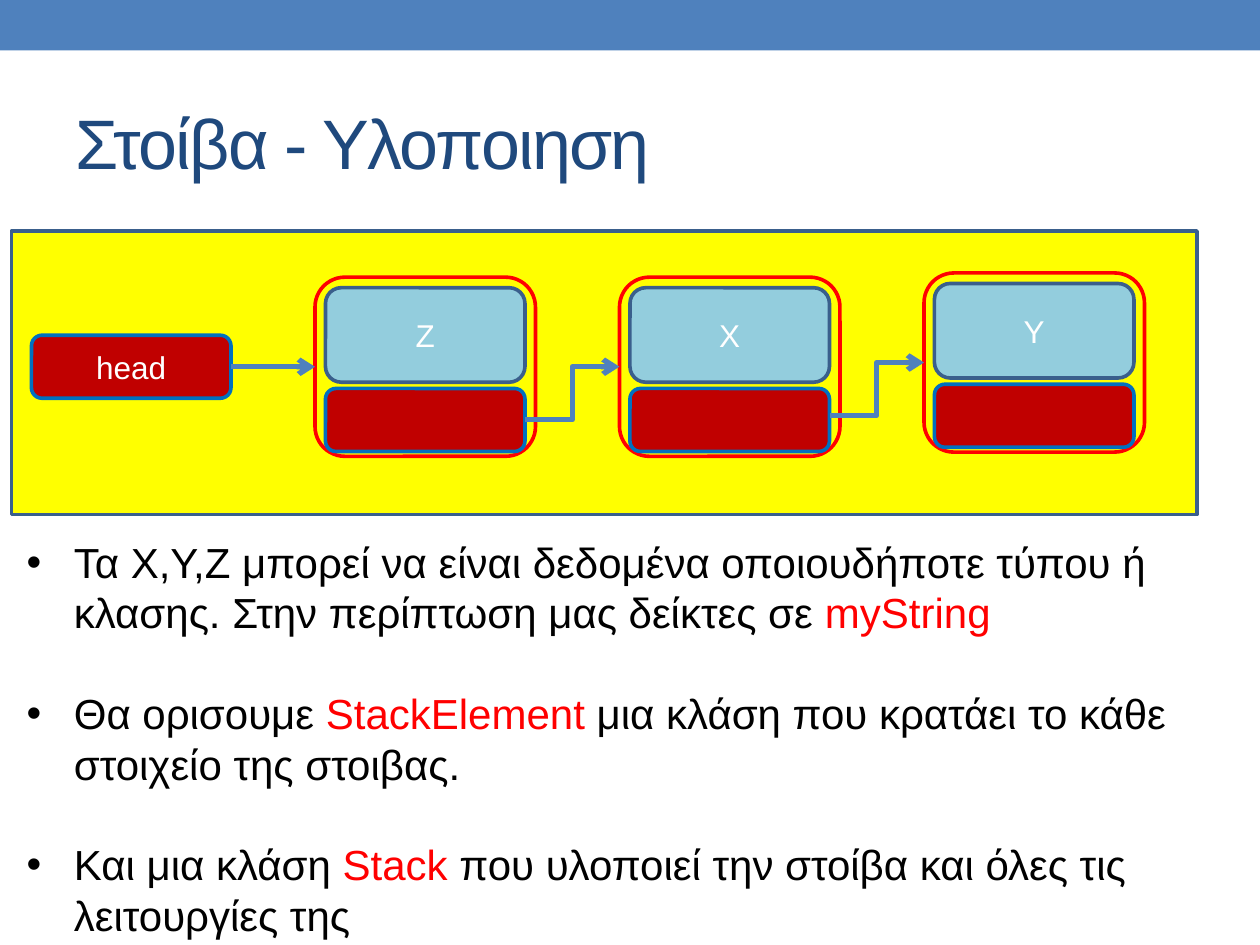
from lxml import etree
from pptx import Presentation
from pptx.dml.color import RGBColor
from pptx.enum import shapes as kinds, text as tx
from pptx.oxml import ns
from pptx.util import Pt

BLUE = RGBColor(0x4F, 0x81, 0xBD)
NAVY = RGBColor(0x1F, 0x49, 0x7D)
EDGE = RGBColor(0x3A, 0x5F, 0x8C)
RIM = RGBColor(0x00, 0x70, 0xC0)
SKY = RGBColor(0x93, 0xCD, 0xDD)
WINE = RGBColor(0xC0, 0x00, 0x00)
RED = RGBColor(0xFF, 0x00, 0x00)
YELLOW = RGBColor(0xFF, 0xFF, 0x00)
WHITE = RGBColor(0xFF, 0xFF, 0xFF)
BLACK = RGBColor(0x00, 0x00, 0x00)

TITLE = "Στοίβα - Υλοποιηση"
# Each point: text before, class name in red, text after
POINTS = [
    ("Τα Χ,Υ,Ζ μπορεί να είναι δεδομένα οποιουδήποτε τύπου ή κλασης. "
     "Στην περίπτωση μας δείκτες σε ", "myString", ""),
    ("Θα ορισουμε ", "StackElement ",
     "μια κλάση που κρατάει το κάθε στοιχείο της στοιβας."),
    ("Και μια κλάση ", "Stack ",
     "που υλοποιεί την στοίβα και όλες τις λειτουργίες της"),
]
# Each node: label, top
NODES = [("Z", 158.4), ("X", 158.4), ("Y", 156)]

LEFT, STEP = 180, 174
NODE_W, NODE_H = 126, 102.4
PAD, CELL_W, DATA_H, LINK_H = 6, 114, 54, 36
LINK_Y = 63.6
HEAD_X, HEAD_Y = 18, 191.6
LEAD = 28.8

RECT = kinds.MSO_SHAPE.RECTANGLE
ROUND = kinds.MSO_SHAPE.ROUNDED_RECTANGLE
STRAIGHT = kinds.MSO_CONNECTOR.STRAIGHT
ELBOW = kinds.MSO_CONNECTOR.ELBOW


def style(font, **more):
    for key, val in {"name": "Arial", **more}.items():
        if key == "color":
            font.color.rgb = val
        else:
            setattr(font, key, val)


def place(shape, *box):
    for key, val in zip(("left", "top", "width", "height"), box):
        setattr(shape, key, Pt(val))


def draw(home, kind, box, fill=None, edge=None, label=""):
    shape = home.add_shape(kind, *map(Pt, box))
    shape.shadow.inherit = False
    if fill is None:
        shape.fill.background()
    else:
        shape.fill.solid()
        shape.fill.fore_color.rgb = fill
    if edge is None:
        shape.line.fill.background()
    else:
        shape.line.color.rgb = edge
        shape.line.width = Pt(2.08)
    if label:
        frame = shape.text_frame
        frame.vertical_anchor = tx.MSO_ANCHOR.MIDDLE
        para = frame.paragraphs[0]
        para.alignment = tx.PP_ALIGN.CENTER
        run = para.add_run()
        run.text = label
        style(run.font, size=Pt(18), color=WHITE)


def arrow(home, kind, *ends):
    link = home.add_connector(kind, *map(Pt, ends))
    link.line.color.rgb = BLUE
    link.line.width = Pt(3)
    tip = etree.SubElement(link.line._get_or_add_ln(), ns.qn("a:tailEnd"))
    tip.set("type", "arrow")
    etree.SubElement(link._element.spPr, ns.qn("a:effectLst"))


def node(home, left, top, label):
    group = home.add_group_shape().shapes
    draw(group, ROUND, (left, top, NODE_W, NODE_H), None, RED)
    draw(group, ROUND, (left + PAD, top + LINK_Y, CELL_W, LINK_H), WINE, RIM)
    draw(group, ROUND, (left + PAD, top + PAD, CELL_W, DATA_H),
         SKY, EDGE, label)


def head(shape):
    place(shape, 36, 42, 648, 78)
    frame = shape.text_frame
    frame.vertical_anchor = tx.MSO_ANCHOR.MIDDLE
    para = frame.paragraphs[0]
    para.alignment = tx.PP_ALIGN.LEFT
    run = para.add_run()
    run.text = TITLE
    style(run.font, size=Pt(40), color=NAVY)
    run.font._element.set("spc", "-100")


def body(shape):
    place(shape, 8, 303, 714, 240)
    frame = shape.text_frame
    frame.auto_size = tx.MSO_AUTO_SIZE.NONE
    for i, parts in enumerate(POINTS):
        para = frame.add_paragraph() if i else frame.paragraphs[0]
        para.line_spacing = Pt(LEAD)
        para.space_before = Pt(LEAD if i else 0)
        props = para._p.get_or_add_pPr()
        props.set("marL", str(Pt(27)))
        props.set("indent", str(-Pt(27)))
        for part, color in zip(parts, (BLACK, RED, BLACK)):
            if part:
                run = para.add_run()
                run.text = part
                style(run.font, size=Pt(24), color=color)


def main():
    deck = Presentation()
    deck.slide_width, deck.slide_height = Pt(720), Pt(540)
    slide = deck.slides.add_slide(deck.slide_layouts[1])
    home = slide.shapes
    head(home.title)
    body(slide.placeholders[1])

    draw(home, RECT, (0, 0, 720, 28.8), BLUE)
    draw(home, RECT, (6.5, 132, 677.5, 162), YELLOW, EDGE)
    draw(home, ROUND, (HEAD_X, HEAD_Y, CELL_W, LINK_H), WINE, RIM, "head")

    kind, x, y = STRAIGHT, HEAD_X + CELL_W, HEAD_Y + LINK_H / 2
    for i, (label, top) in enumerate(NODES):
        left = LEFT + i * STEP
        node(home, left, top, label)
        mid = top + NODE_H / 2
        arrow(home, kind, x, y, left, mid)
        # The next arrow leaves this node's link cell, level with its target
        drop = NODES[min(i + 1, len(NODES) - 1)][1]
        kind, x, y = ELBOW, left + PAD + CELL_W, drop + LINK_Y + LINK_H / 2
    deck.save("out.pptx")


if __name__ == "__main__":
    main()
